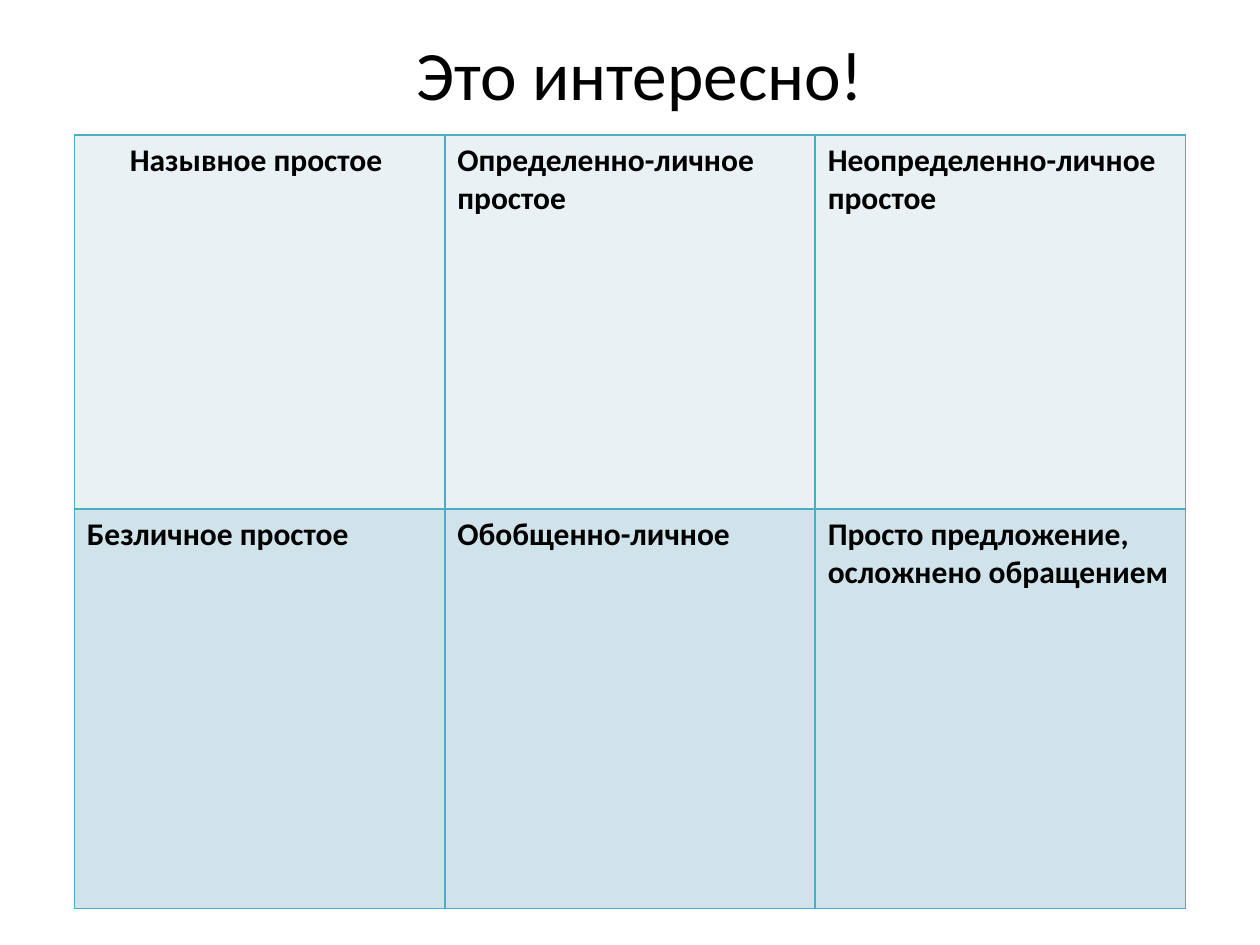
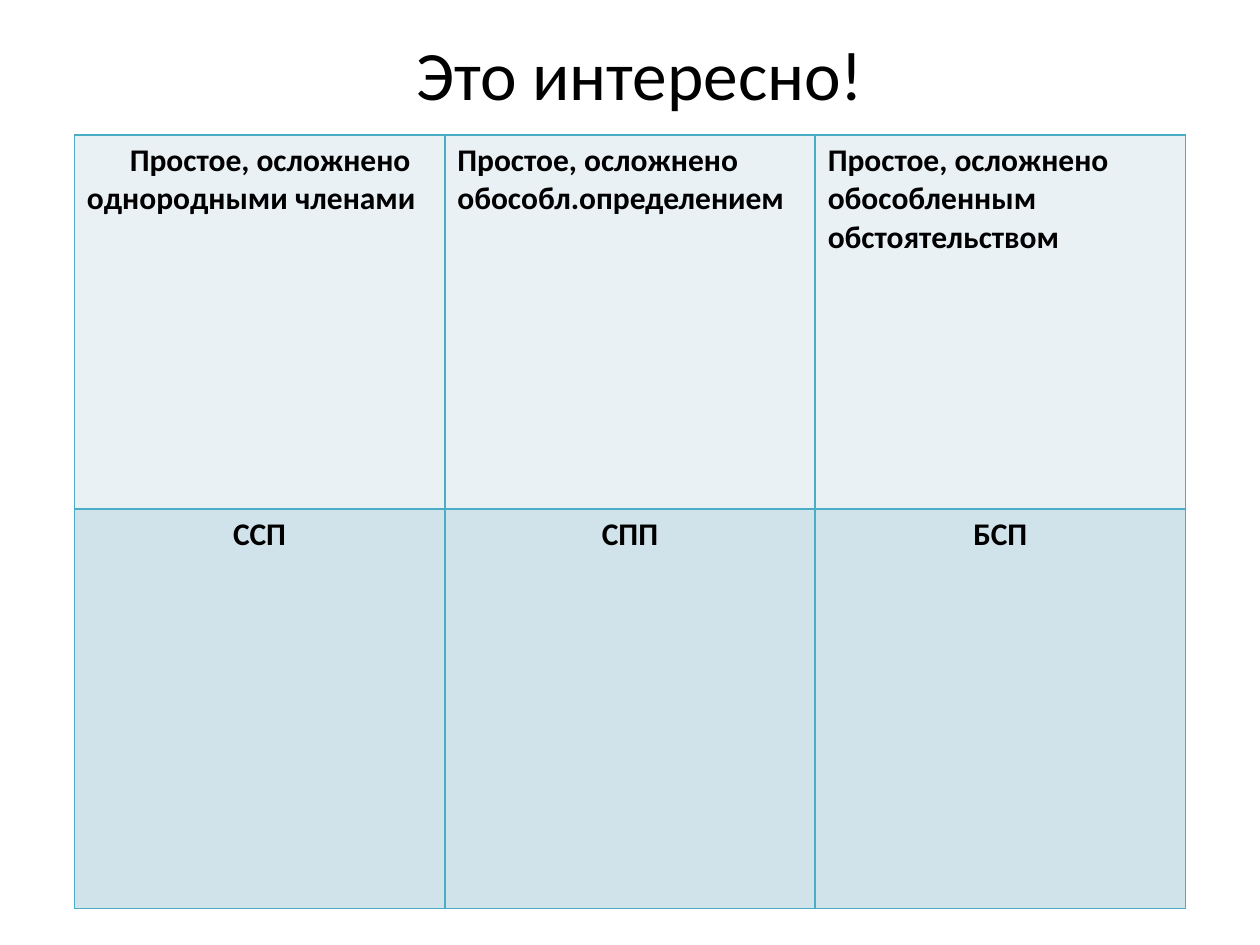
from dataclasses import dataclass

from lxml import etree
from pptx import Presentation
from pptx import util as u
from pptx.dml import color as clr
from pptx.enum import text
from pptx.oxml import ns


@dataclass(frozen=True)
class Theme:
    font: str = "Calibri"
    ink: str = "000000"
    edge: str = "4BACC6"
    bands: tuple[str, ...] = ("E9F1F5", "D0E3EA")
    head: float = 39.6
    body: float = 18
    rule: float = 1


@dataclass(frozen=True)
class Entry:
    words: str
    align: text.PP_ALIGN = text.PP_ALIGN.LEFT
    indent: float = 0


@dataclass(frozen=True)
class Sheet:
    title: str
    rows: tuple[tuple[Entry, ...], ...]


THEME = Theme()
MID = text.PP_ALIGN.CENTER
TITLE = "Это интересно!"
FIRST = 0.34
LEFT, TOP = 0.59, 1.07
COL = 2.94
HIGHS = (2.97, 3.17)

SHEETS = (
    Sheet(TITLE, (
        (Entry("Назывное простое", indent=FIRST),
         Entry("Определенно-личное простое"),
         Entry("Неопределенно-личное простое")),
        (Entry("Безличное простое"),
         Entry("Обобщенно-личное"),
         Entry("Просто предложение, осложнено обращением")),
    )),
    Sheet(TITLE, (
        (Entry("Простое, осложнено однородными членами", indent=FIRST),
         Entry("Простое, осложнено обособл.определением"),
         Entry("Простое, осложнено обособленным обстоятельством")),
        tuple(Entry(words, MID) for words in ("ССП", "СПП", "БСП")),
    )),
)


def write(para, words: str, size: float, bold: bool = False) -> None:
    run = para.add_run()
    run.text = words
    run.font.name = THEME.font
    run.font.size = u.Pt(size)
    run.font.bold = bold
    run.font.color.rgb = clr.RGBColor.from_string(THEME.ink)


def add_title(slide, words: str) -> None:
    title = slide.shapes.title
    title.left, title.top = u.Inches(0.83), u.Inches(0.18)
    title.width, title.height = u.Inches(8.5), u.Inches(0.8)
    frame = title.text_frame
    frame.word_wrap = True
    frame.vertical_anchor = text.MSO_ANCHOR.MIDDLE
    para = frame.paragraphs[0]
    para.alignment = MID
    write(para, words, THEME.head)


def add_edges(cell) -> None:
    props = cell._tc.get_or_add_tcPr()
    for side in "LRTB":
        line = etree.SubElement(props, ns.qn(f"a:ln{side}"), w=str(u.Pt(THEME.rule)))
        fill = etree.SubElement(line, ns.qn("a:solidFill"))
        etree.SubElement(fill, ns.qn("a:srgbClr"), val=THEME.edge)


def fill_cell(cell, entry: Entry, band: str) -> None:
    add_edges(cell)
    cell.fill.solid()
    cell.fill.fore_color.rgb = clr.RGBColor.from_string(band)
    para = cell.text_frame.paragraphs[0]
    para.alignment = entry.align
    if entry.indent:
        para._p.get_or_add_pPr().set("indent", str(u.Inches(entry.indent)))
    write(para, entry.words, THEME.body, bold=True)


def add_grid(slide, rows: tuple[tuple[Entry, ...], ...]) -> None:
    count = len(rows[0])
    grid = slide.shapes.add_table(
        len(rows), count, u.Inches(LEFT), u.Inches(TOP),
        u.Inches(COL * count), u.Inches(sum(HIGHS))).table
    grid.first_row = grid.horz_banding = False
    for col in grid.columns:
        col.width = u.Inches(COL)
    for r, (row, high, band) in enumerate(zip(rows, HIGHS, THEME.bands)):
        grid.rows[r].height = u.Inches(high)
        for c, entry in enumerate(row):
            fill_cell(grid.cell(r, c), entry, band)


def main() -> None:
    deck = Presentation()
    deck.slide_width, deck.slide_height = u.Inches(10), u.Inches(7.5)
    for sheet in SHEETS:
        slide = deck.slides.add_slide(deck.slide_layouts[5])
        add_title(slide, sheet.title)
        add_grid(slide, sheet.rows)
    deck.save("out.pptx")


if __name__ == "__main__":
    main()
